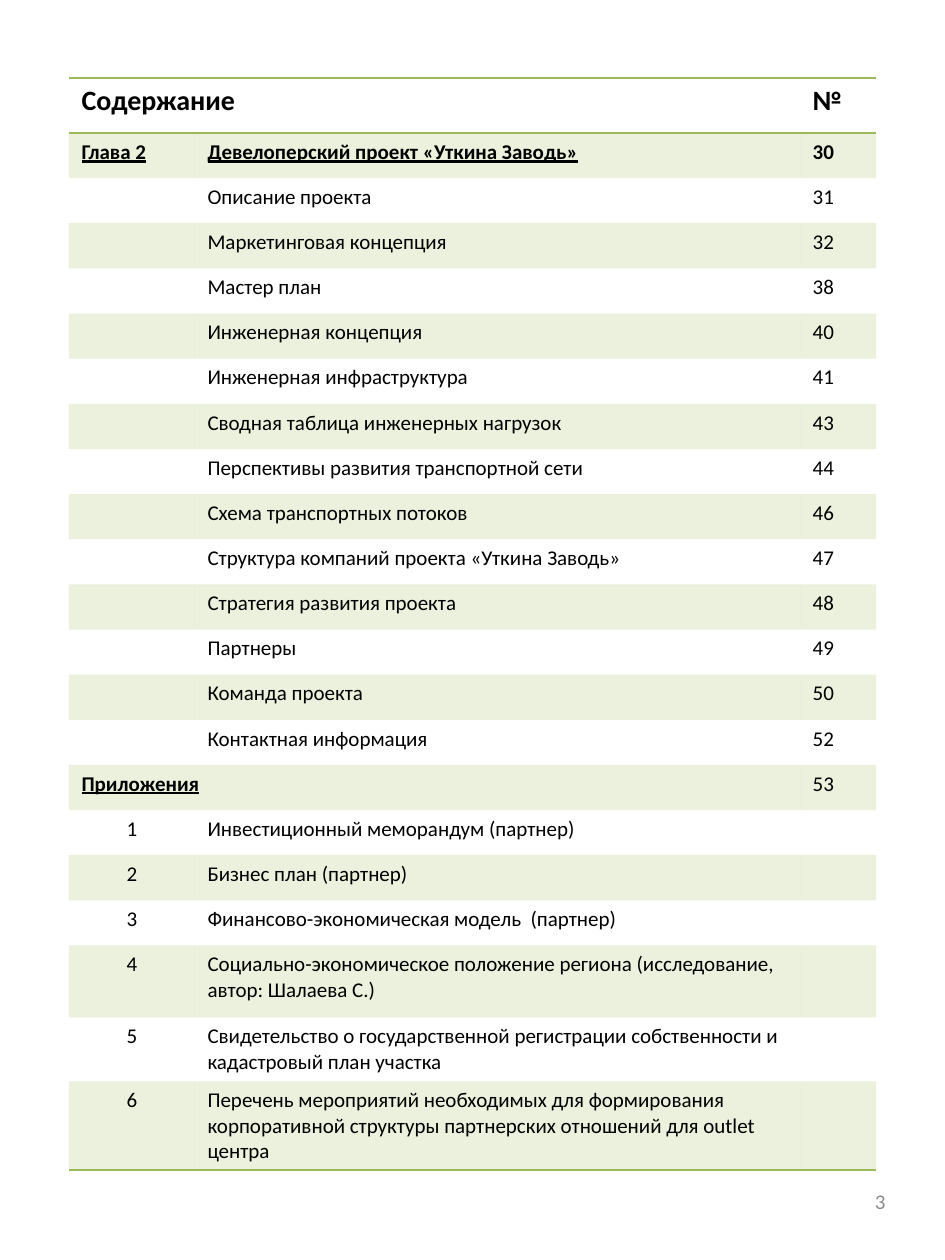
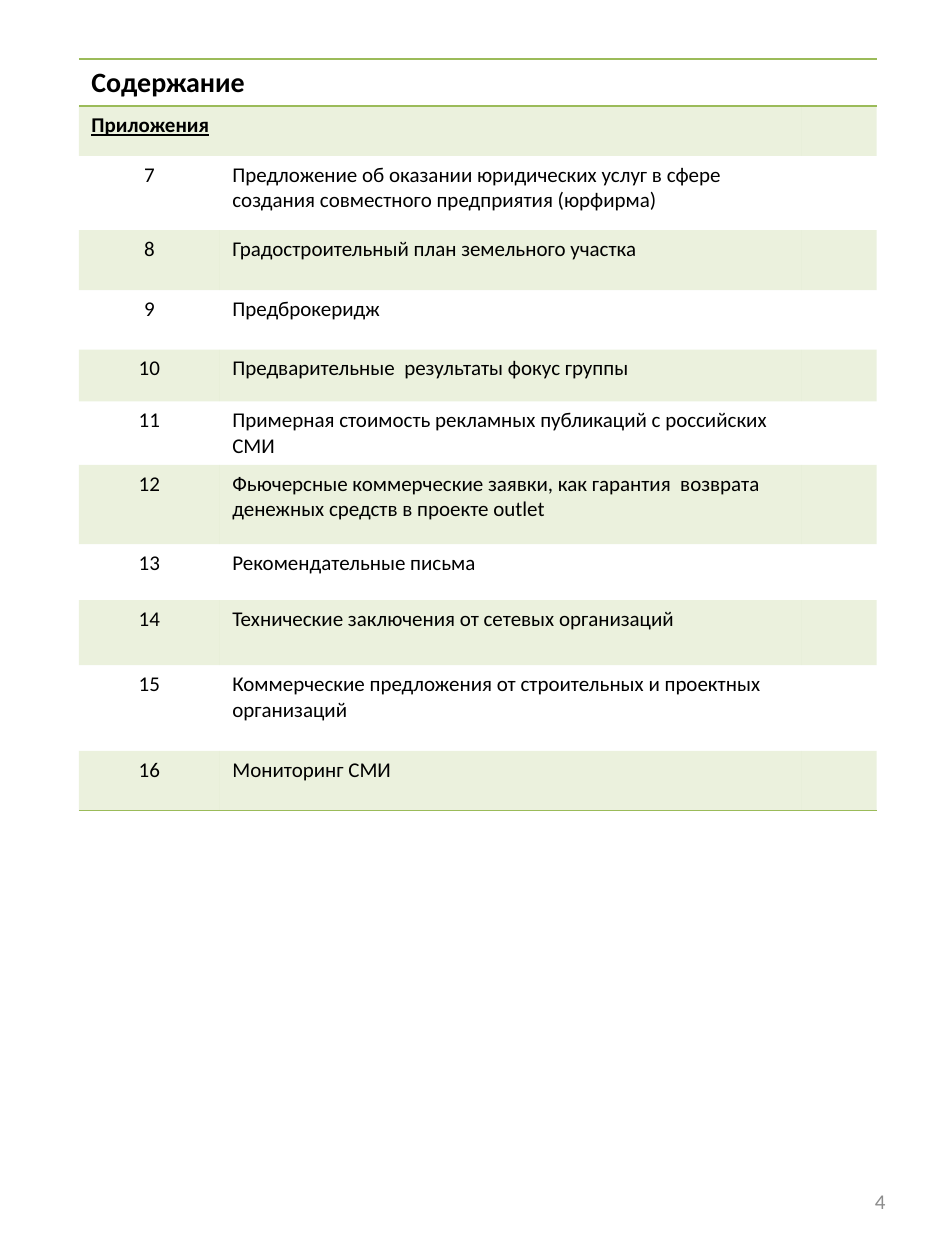
from lxml import etree
from pptx import Presentation
from pptx import util as u
from pptx.dml.color import RGBColor
from pptx.enum import text
from pptx.oxml import ns

BLACK = RGBColor(0, 0, 0)
GRAY = RGBColor(0x8C, 0x8C, 0x8C)
GREEN = RGBColor(0x9B, 0xBB, 0x59)
FONT = "Calibri"
BAND_OPACITY = 20
PLAIN_TABLE_STYLE = "{2D5ABB26-0587-4C30-8999-92F81FD0307C}"
BLANK_LAYOUT = 6
ROW = 0.91

# Each entry: row height in cm, first column, topic, page
CHAPTER_TOPICS = [
    ("Описание проекта", "31"),
    ("Маркетинговая концепция", "32"),
    ("Мастер план", "38"),
    ("Инженерная концепция", "40"),
    ("Инженерная инфраструктура", "41"),
    ("Сводная таблица инженерных нагрузок", "43"),
    ("Перспективы развития транспортной сети", "44"),
    ("Схема транспортных потоков", "46"),
    ("Структура компаний проекта «Уткина Заводь»", "47"),
    ("Стратегия развития проекта", "48"),
    ("Партнеры", "49"),
    ("Команда проекта", "50"),
    ("Контактная информация", "52"),
]
CHAPTER_CONTENTS = [
    (1.11, "Содержание", "", "№"),
    (ROW, "Глава 2", "Девелоперский проект «Уткина Заводь»", "30"),
    *[(ROW, "", topic, page) for topic, page in CHAPTER_TOPICS],
    (ROW, "Приложения", "", "53"),
    (ROW, "1", "Инвестиционный меморандум (партнер)", ""),
    (ROW, "2", "Бизнес план (партнер)", ""),
    (ROW, "3", "Финансово-экономическая модель  (партнер)", ""),
    (1.45, "4", "Социально-экономическое положение региона "
                "(исследование, автор: Шалаева С.)", ""),
    (1.29, "5", "Свидетельство о государственной регистрации собственности "
                "и кадастровый план участка", ""),
    (1.79, "6", "Перечень мероприятий необходимых для формирования корпоративной "
                "структуры партнерских отношений для outlet центра", ""),
]
APPENDIX_CONTENTS = [
    (0.95, "Содержание", "", ""),
    (1.0, "Приложения", "", ""),
    (1.5, "7", "Предложение об оказании юридических услуг в сфере "
               "создания совместного предприятия (юрфирма)", ""),
    (1.21, "8", "Градостроительный план земельного участка", ""),
    (1.2, "9", "Предброкеридж", ""),
    (1.04, "10", "Предварительные  результаты фокус группы", ""),
    (1.28, "11", "Примерная стоимость рекламных публикаций с российских СМИ", ""),
    (1.6, "12", "Фьючерсные коммерческие заявки, как гарантия  возврата "
                "денежных средств в проекте outlet", ""),
    (1.13, "13", "Рекомендательные письма", ""),
    (1.31, "14", "Технические заключения от сетевых организаций", ""),
    (1.73, "15", "Коммерческие предложения от строительных и проектных организаций", ""),
    (1.2, "16", "Мониторинг СМИ", ""),
]


def write_text(frame, content, size=12, bold=False, underline=False,
               color=BLACK, align=text.PP_ALIGN.LEFT):
    paragraph = frame.paragraphs[0]
    paragraph.alignment = align
    if not content:
        # An empty cell needs its own size, or it stretches the row
        etree.SubElement(paragraph._p, ns.qn("a:endParaRPr"), sz=str(size * 100))
        return
    run = paragraph.add_run()
    run.text = content
    font = run.font
    font.name = FONT
    font.size = u.Pt(size)
    font.bold = bold
    font.underline = underline
    font.color.rgb = color


def rule_cell(cell, *sides):
    """Draw a green line on the given sides: lnT, lnB."""
    properties = cell._tc.get_or_add_tcPr()
    for position, side in enumerate(sides):
        line = etree.Element(ns.qn(f"a:{side}"), w=str(u.Pt(1)))
        fill = etree.SubElement(line, ns.qn("a:solidFill"))
        etree.SubElement(fill, ns.qn("a:srgbClr"), val=str(GREEN))
        properties.insert(position, line)


def band_cell(cell):
    cell.fill.solid()
    cell.fill.fore_color.rgb = GREEN
    shade = cell._tc.tcPr.find(f".//{ns.qn('a:srgbClr')}")
    etree.SubElement(shade, ns.qn("a:alpha"), val=str(BAND_OPACITY * 1000))


class ContentsDeck:
    def __init__(self):
        self.presentation = Presentation()
        self.presentation.slide_width = u.Cm(19.05)
        self.presentation.slide_height = u.Cm(25.4)
        self.slide = None

    def add_page(self, number):
        layout = self.presentation.slide_layouts[BLANK_LAYOUT]
        self.slide = self.presentation.slides.add_slide(layout)
        footer = self.slide.shapes.add_textbox(
            u.Cm(13.65), u.Cm(23.54), u.Cm(4.45), u.Cm(1.35)).text_frame
        footer.word_wrap = True
        footer.vertical_anchor = text.MSO_ANCHOR.MIDDLE
        write_text(footer, number, color=GRAY, align=text.PP_ALIGN.RIGHT)

    def add_contents(self, left, top, widths, entries):
        heights = [entry[0] for entry in entries]
        contents = self.slide.shapes.add_table(
            len(entries), len(widths), u.Cm(left), u.Cm(top),
            u.Cm(sum(widths)), u.Cm(sum(heights))).table
        contents.first_row = contents.horz_banding = False
        contents._tbl.tblPr.find(ns.qn("a:tableStyleId")).text = PLAIN_TABLE_STYLE
        for column, width in zip(contents.columns, widths):
            column.width = u.Cm(width)
        for index, (height, *labels) in enumerate(entries):
            contents.rows[index].height = u.Cm(height)
            self.fill_row(contents, index, labels)

    def fill_row(self, contents, index, labels):
        header = index == 0
        last = index == len(contents.rows) - 1
        marker, topic, page = labels
        heading = bool(marker) and not marker.isdigit()
        chapter = heading and bool(topic)
        for column, label in enumerate(labels):
            cell = contents.cell(index, column)
            is_page = column == 2
            write_text(
                cell.text_frame, label,
                size=16 if header else 12,
                bold=header or chapter or (heading and not is_page),
                underline=heading and not header and not is_page,
                align=text.PP_ALIGN.CENTER if column == 0 and label.isdigit()
                else text.PP_ALIGN.LEFT)
            if index % 2:
                band_cell(cell)
            else:
                cell.fill.background()
            if header:
                rule_cell(cell, "lnT", "lnB")
            elif last:
                rule_cell(cell, "lnB")
        if heading and not topic:
            end = 2 if header and not page else 1
            contents.cell(index, 0).merge(contents.cell(index, end))


def main():
    deck = ContentsDeck()
    deck.add_page("3")
    deck.add_contents(1.39, 1.57, (2.54, 12.2, 1.53), CHAPTER_CONTENTS)
    deck.add_page("4")
    deck.add_contents(1.59, 1.19, (2.84, 11.72, 1.52), APPENDIX_CONTENTS)
    deck.presentation.save("out.pptx")


if __name__ == "__main__":
    main()
